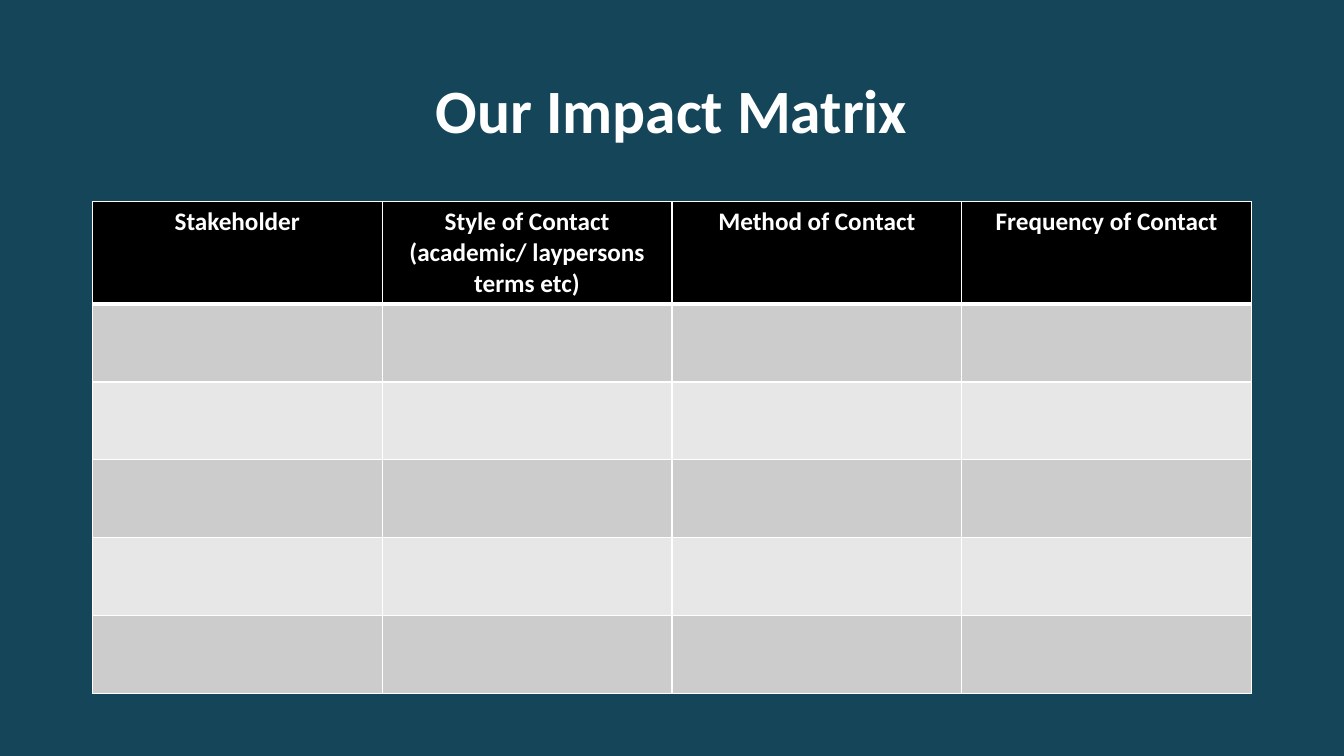
import pptx
import pptx.util
import pptx.dml.color
import pptx.enum.text
import pptx.oxml

Pt = pptx.util.Pt
Align = pptx.enum.text.PP_ALIGN

TITLE = "Our Impact Matrix"
HEADS = [
    "Stakeholder",
    "Style of Contact (academic/ laypersons terms etc)",
    "Method of Contact",
    "Frequency of Contact",
]
BLANKS = 5
FONT = "Calibri"
COLORS = {
    "back": "144559",
    "text": "FFFFFF",
    "line": "FFFFFF",
    "head": "000000",
    "odd": "CCCCCC",
    "even": "E7E7E7",
}
LEFT, WIDTH = 66, 828
TOP, HEAD_H, ROW_H = 144, 73, 55.7
THIN, THICK = 1, 3


def color(name):
    return pptx.dml.color.RGBColor.from_string(COLORS[name])


def write(frame, text, size):
    """Put one centred bold run into the frame."""
    para = frame.paragraphs[0]
    para.alignment = Align.CENTER
    run = para.add_run()
    run.text = text
    run.font.name = FONT
    run.font.size = Pt(size)
    run.font.bold = True
    run.font.color.rgb = color("text")
    return para


def border(cell, top, bottom):
    """Add the four cell lines; they must come before the fill."""
    props = cell._tc.get_or_add_tcPr()
    for side, width in zip("LRTB", (THIN, THIN, top, bottom)):
        props.append(pptx.oxml.parse_xml(
            f'<a:ln{side} xmlns:a="http://schemas.openxmlformats.org/drawingml/2006/main"'
            f' w="{int(Pt(width))}"><a:solidFill><a:srgbClr val="{COLORS["line"]}"/>'
            f'</a:solidFill></a:ln{side}>'))


def add_title(slide):
    title = slide.shapes.title
    title.left, title.top = Pt(LEFT), Pt(28.75)
    title.width, title.height = Pt(WIDTH), Pt(104.4)
    frame = title.text_frame
    frame.word_wrap = True
    frame.auto_size = pptx.enum.text.MSO_AUTO_SIZE.NONE
    frame.vertical_anchor = pptx.enum.text.MSO_ANCHOR.MIDDLE
    write(frame, TITLE, 44).line_spacing = 0.9


def add_matrix(slide):
    rows, cols = BLANKS + 1, len(HEADS)
    table = slide.shapes.add_table(
        rows, cols, Pt(LEFT), Pt(TOP), Pt(WIDTH), Pt(HEAD_H + BLANKS * ROW_H)).table
    for col in table.columns:
        col.width = Pt(WIDTH / cols)
    for r, row in enumerate(table.rows):
        row.height = Pt(ROW_H if r else HEAD_H)
        fill = "head" if r == 0 else "odd" if r % 2 else "even"
        for cell in row.cells:
            border(cell, THICK if r == 1 else THIN, THIN if r else THICK)
            cell.fill.solid()
            cell.fill.fore_color.rgb = color(fill)
    for cell, head in zip(table.rows[0].cells, HEADS):
        write(cell.text_frame, head, 18)


def main():
    deck = pptx.Presentation()
    deck.slide_width, deck.slide_height = Pt(960), Pt(540)
    slide = deck.slides.add_slide(deck.slide_layouts[5])
    slide.background.fill.solid()
    slide.background.fill.fore_color.rgb = color("back")
    add_title(slide)
    add_matrix(slide)
    deck.save("out.pptx")


if __name__ == "__main__":
    main()
